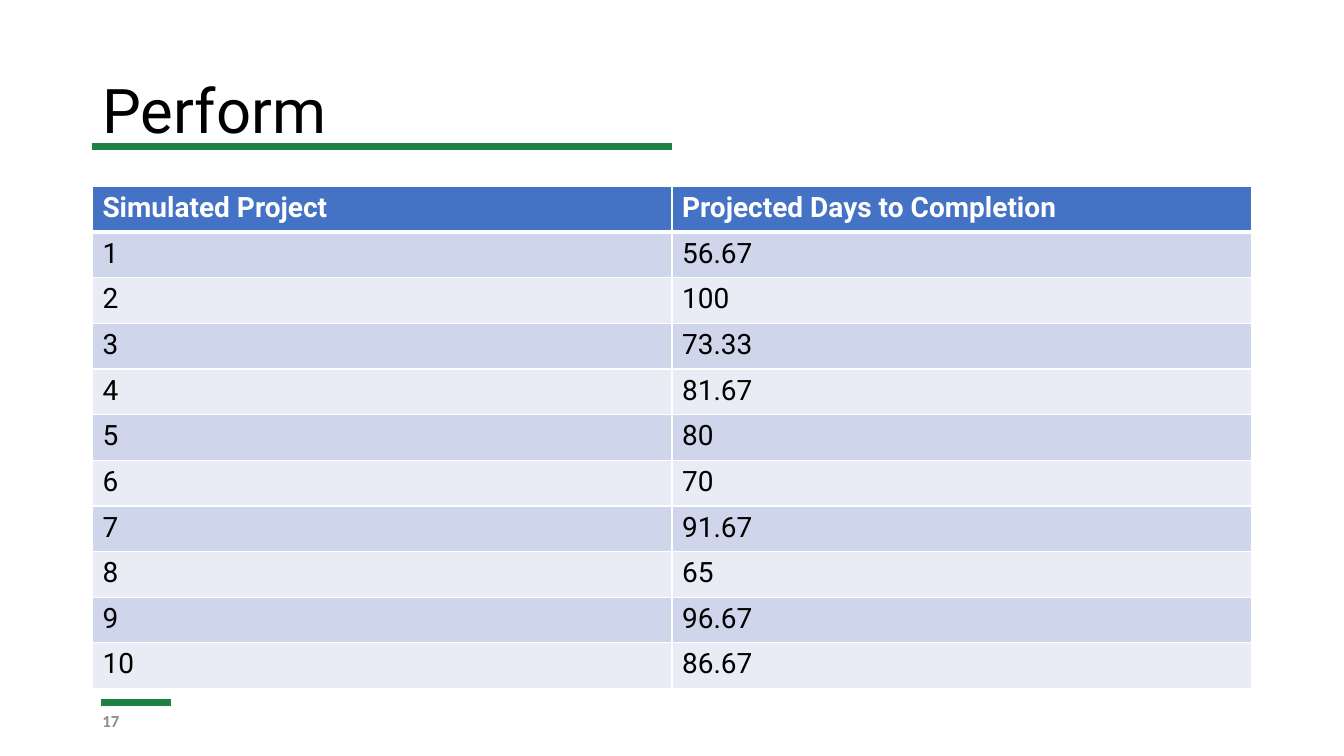
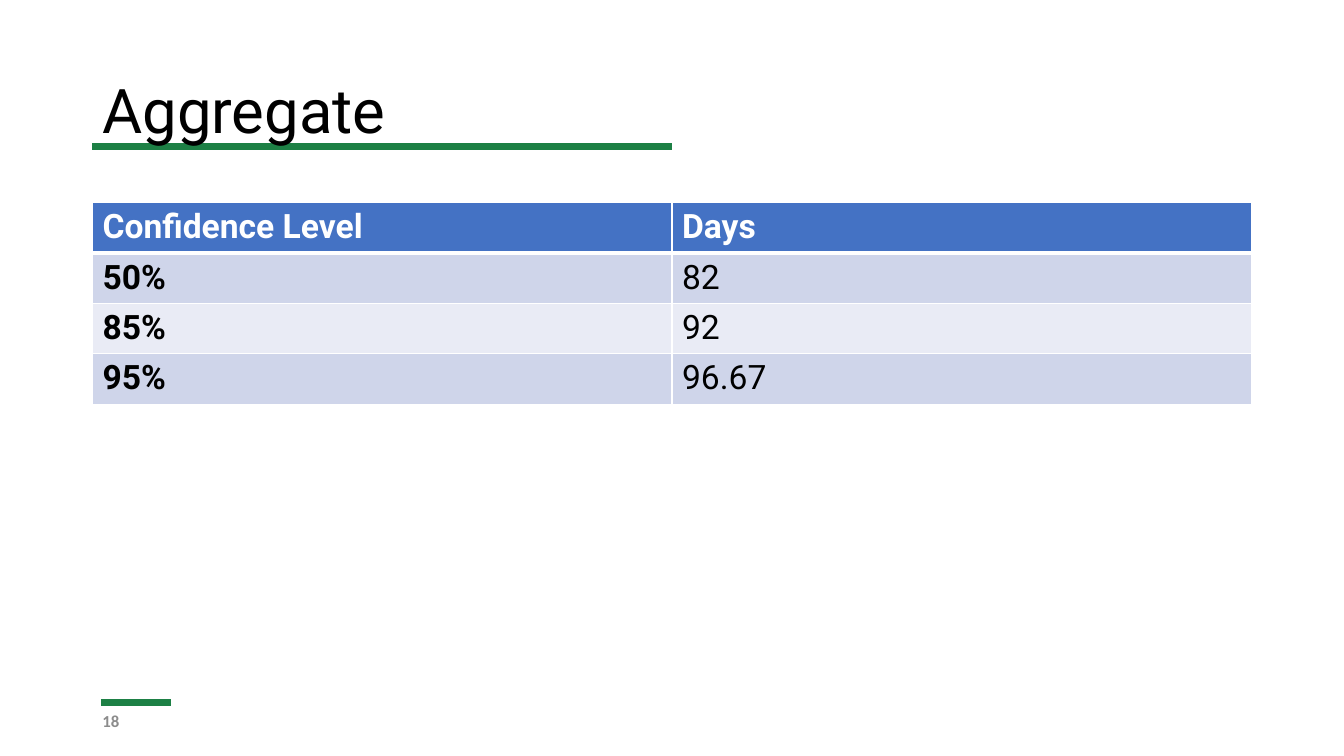
"""Build two slides with simulation results in tables."""
import dataclasses

import lxml.etree
import pptx
import pptx.dml.color
import pptx.enum.shapes
import pptx.enum.text
import pptx.oxml.ns
import pptx.util

Cm = pptx.util.Cm
Pt = pptx.util.Pt


@dataclasses.dataclass(frozen=True)
class Theme:
    accent: str = "1D8045"
    header: str = "4472C4"
    bands: tuple = ("CFD5EA", "E9EBF5")
    ink: str = "000000"
    paper: str = "FFFFFF"
    muted: str = "8C8C8C"
    font: str = "Roboto"
    number_font: str = "Calibri"
    title_size: int = 44
    number_size: int = 12
    large_table_size: int = 24
    table_size: int = 20
    rule_width: int = 5
    border: int = 1
    header_border: int = 3
    left: float = 2.33
    width: float = 29.21


class Deck:
    def __init__(self, theme):
        self.theme = theme
        self.presentation = pptx.Presentation()
        self.presentation.slide_width = Cm(33.87)
        self.presentation.slide_height = Cm(19.05)
        self.slide = None

    def add_slide(self, title, number):
        theme = self.theme
        self.slide = self.presentation.slides.add_slide(self.presentation.slide_layouts[6])
        self.add_rule(2.54, 17.7, 1.78)
        self.add_rule(theme.left, 3.68, theme.width / 2)
        self.add_text(title, (theme.left, 1.02, theme.width, 3.68), theme.ink,
                      {"name": theme.font, "size": Pt(theme.title_size)}, 0.9)
        self.add_text(str(number), (theme.left, 17.65, 7.62, 1.02), theme.muted,
                      {"name": theme.number_font, "size": Pt(theme.number_size), "bold": True})

    def add_rule(self, left, top, width):
        rule = self.slide.shapes.add_connector(
            pptx.enum.shapes.MSO_CONNECTOR.STRAIGHT,
            Cm(left), Cm(top), Cm(left + width), Cm(top))
        rule.line.color.rgb = pptx.dml.color.RGBColor.from_string(self.theme.accent)
        rule.line.width = Pt(self.theme.rule_width)
        lxml.etree.SubElement(rule._element.spPr, pptx.oxml.ns.qn("a:effectLst"))

    def add_text(self, text, box, color, style, line_spacing=1.0):
        frame = self.slide.shapes.add_textbox(*map(Cm, box)).text_frame
        frame.word_wrap = True
        frame.vertical_anchor = pptx.enum.text.MSO_ANCHOR.MIDDLE
        paragraph = frame.paragraphs[0]
        paragraph.line_spacing = line_spacing
        self.add_run(paragraph, text, color, style)

    def add_run(self, paragraph, text, color, style):
        run = paragraph.add_run()
        run.text = text
        run.font.color.rgb = pptx.dml.color.RGBColor.from_string(color)
        for name, value in style.items():
            setattr(run.font, name, value)

    def add_table(self, rows, top, height, size, bold_labels=False):
        theme = self.theme
        table = self.slide.shapes.add_table(
            len(rows), len(rows[0]), Cm(theme.left), Cm(top),
            Cm(theme.width), Cm(height)).table
        for row, values in enumerate(rows):
            is_header = row == 0
            fill = theme.header if is_header else theme.bands[(row - 1) % 2]
            color = theme.paper if is_header else theme.ink
            for column, text in enumerate(values):
                cell = table.cell(row, column)
                self.add_borders(cell, row)
                cell.fill.solid()
                cell.fill.fore_color.rgb = pptx.dml.color.RGBColor.from_string(fill)
                bold = is_header or (bold_labels and column == 0)
                self.add_run(cell.text_frame.paragraphs[0], text, color,
                             {"name": theme.font, "size": Pt(size), "bold": bold})

    def add_borders(self, cell, row):
        theme = self.theme
        widths = dict.fromkeys(("lnL", "lnR", "lnT", "lnB"), theme.border)
        if row < 2:
            widths["lnB" if row == 0 else "lnT"] = theme.header_border
        properties = cell._tc.get_or_add_tcPr()
        qn = pptx.oxml.ns.qn
        for side, width in widths.items():
            line = lxml.etree.SubElement(properties, qn(f"a:{side}"), w=str(Pt(width)))
            fill = lxml.etree.SubElement(line, qn("a:solidFill"))
            lxml.etree.SubElement(fill, qn("a:srgbClr"), val=theme.paper)


def main():
    theme = Theme()
    deck = Deck(theme)

    deck.add_slide("Perform", 17)
    days = ("56.67", "100", "73.33", "81.67", "80", "70", "91.67", "65", "96.67", "86.67")
    projects = [(str(project), value) for project, value in enumerate(days, 1)]
    deck.add_table([("Simulated Project", "Projected Days to Completion"), *projects],
                   top=4.7, height=12.65, size=theme.table_size)

    deck.add_slide("Aggregate", 18)
    deck.add_table([("Confidence Level", "Days"), ("50%", "82"), ("85%", "92"),
                    ("95%", "96.67")],
                   top=5.1, height=5, size=theme.large_table_size, bold_labels=True)

    deck.presentation.save("out.pptx")


if __name__ == "__main__":
    main()
